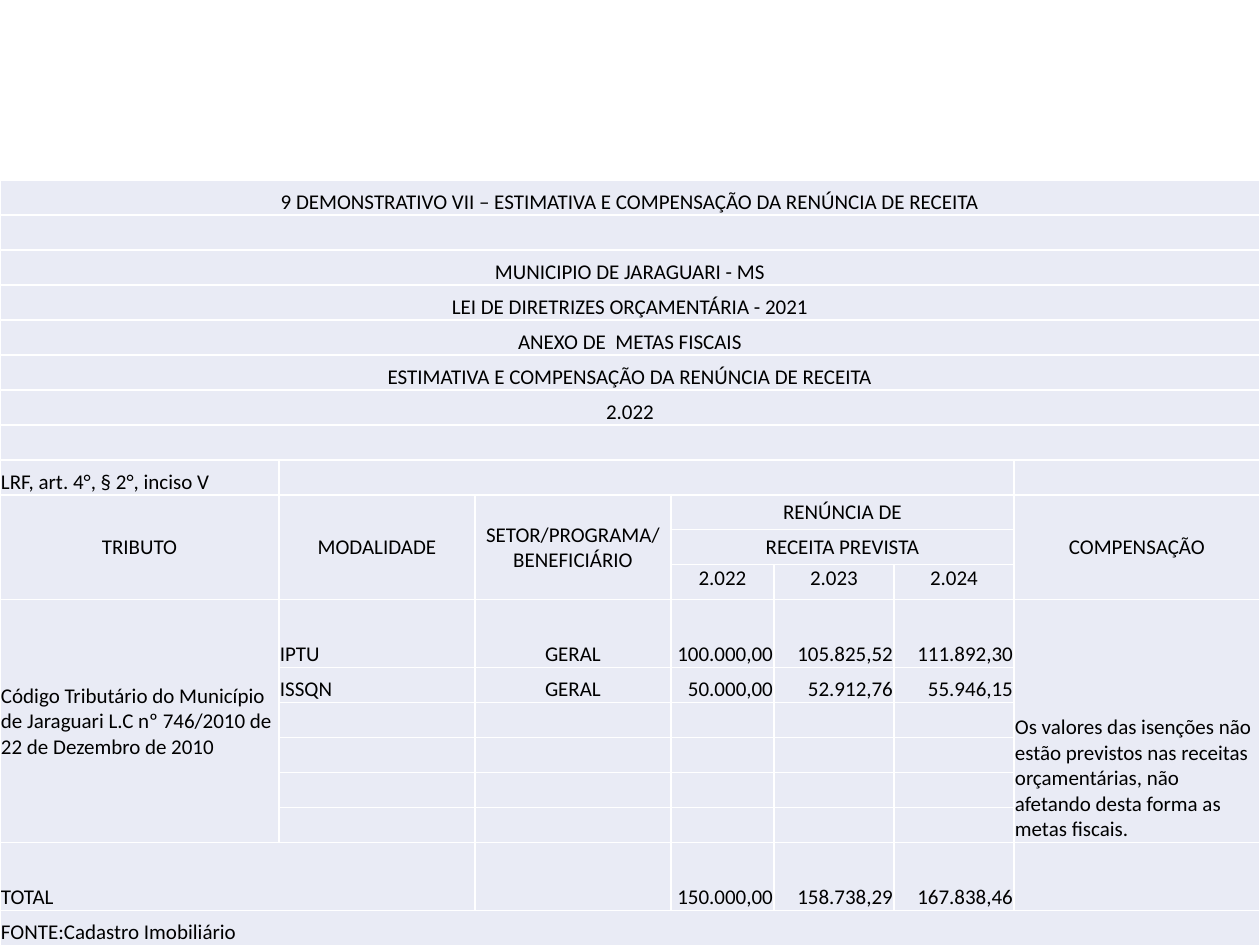
import pptx
import pptx.util
import pptx.dml.color
import pptx.enum.text
import pptx.oxml.ns
from lxml import etree

PX = 914400 // 126
COLORS = {"cell": "E9EBF5", "border": "FFFFFF", "text": "000000"}
FONT, SIZE = "Calibri", 12
ALIGN = {
    "l": pptx.enum.text.PP_ALIGN.LEFT,
    "c": pptx.enum.text.PP_ALIGN.CENTER,
    "r": pptx.enum.text.PP_ALIGN.RIGHT,
}
ANCHOR = {
    "t": pptx.enum.text.MSO_ANCHOR.TOP,
    "m": pptx.enum.text.MSO_ANCHOR.MIDDLE,
    "b": pptx.enum.text.MSO_ANCHOR.BOTTOM,
}

# Content
TITLES = [
    "9 DEMONSTRATIVO VII – ESTIMATIVA E COMPENSAÇÃO DA RENÚNCIA DE RECEITA",
    "",
    "MUNICIPIO DE JARAGUARI - MS",
    "LEI DE DIRETRIZES ORÇAMENTÁRIA - 2021",
    "ANEXO DE  METAS FISCAIS",
    "ESTIMATIVA E COMPENSAÇÃO DA RENÚNCIA DE RECEITA",
    "2.022",
    "",
]
HEADERS = {0: "TRIBUTO", 1: "MODALIDADE", 2: "SETOR/PROGRAMA/BENEFICIÁRIO", 6: "COMPENSAÇÃO"}
REVENUE_HEADERS = ["RENÚNCIA DE", "RECEITA PREVISTA"]
YEARS = ["2.022", "2.023", "2.024"]
TAXES = [
    ("IPTU", "GERAL", "100.000,00", "105.825,52", "111.892,30"),
    ("ISSQN", "GERAL", "50.000,00", "52.912,76", "55.946,15"),
]
TOTALS = ["150.000,00", "158.738,29", "167.838,46"]
LAW = "Código Tributário do Município de Jaraguari L.C nº 746/2010 de 22 de Dezembro de 2010"
COMPENSATION = ("Os valores das isenções não estão previstos nas receitas orçamentárias, "
                "não afetando desta forma as metas fiscais.")

# Rows of each part of the table
REFERENCE = len(TITLES)
HEADER = REFERENCE + 1
YEAR = HEADER + len(REVENUE_HEADERS)
BODY, BODY_ROWS = YEAR + 1, 6
TOTAL = BODY + BODY_ROWS
SOURCE = TOTAL + 1
COL_WIDTHS = [279, 196, 196, 103, 120, 120, 246]
ROW_HEIGHTS = [68 if i in (BODY, TOTAL) else 35 for i in range(SOURCE + 1)]
TOP, LAST = 180, len(COL_WIDTHS) - 1


def rgb(name):
    return pptx.dml.color.RGBColor.from_string(COLORS[name])


def style_cell(cell):
    cell.margin_left = cell.margin_right = cell.margin_top = PX
    cell.margin_bottom = 0
    cell.fill.solid()
    cell.fill.fore_color.rgb = rgb("cell")
    tag = pptx.oxml.ns.qn
    tcPr = cell._tc.get_or_add_tcPr()
    for i, side in enumerate(("a:lnL", "a:lnR", "a:lnT", "a:lnB")):
        ln = etree.Element(tag(side), w="12700")
        fill = etree.SubElement(ln, tag("a:solidFill"))
        etree.SubElement(fill, tag("a:srgbClr"), val=COLORS["border"])
        tcPr.insert(i, ln)
    # Keeps empty cells from growing past their row height
    p = cell.text_frame.paragraphs[0]
    etree.SubElement(p._p, tag("a:endParaRPr"), sz=str(SIZE * 100))


def put(table, row, col, text, align="l", anchor="b", rows=1, cols=1):
    cell = table.cell(row, col)
    if rows > 1 or cols > 1:
        cell.merge(table.cell(row + rows - 1, col + cols - 1))
    cell.vertical_anchor = ANCHOR[anchor]
    if not text:
        return
    p = cell.text_frame.paragraphs[0]
    p.text = text
    p.alignment = ALIGN[align]
    for r in p.runs:
        r.font.name = FONT
        r.font.size = pptx.util.Pt(SIZE)
        r.font.color.rgb = rgb("text")


prs = pptx.Presentation()
prs.slide_width, prs.slide_height = 1260 * PX, 945 * PX
s = prs.slides.add_slide(prs.slide_layouts[6])

# Table grid
table = s.shapes.add_table(
    len(ROW_HEIGHTS), len(COL_WIDTHS), 0, TOP * PX,
    sum(COL_WIDTHS) * PX, sum(ROW_HEIGHTS) * PX).table
table.first_row = table.horz_banding = False
for column, width in zip(table.columns, COL_WIDTHS):
    column.width = width * PX
for row, height in zip(table.rows, ROW_HEIGHTS):
    row.height = height * PX
for cell in table.iter_cells():
    style_cell(cell)

# Titles and legal reference
for i, title in enumerate(TITLES):
    put(table, i, 0, title, "c", cols=LAST + 1)
put(table, REFERENCE, 0, "LRF, art. 4°, § 2°, inciso V")
put(table, REFERENCE, 1, "", cols=5)

# Column headers
for col, text in HEADERS.items():
    put(table, HEADER, col, text, "c", "m", rows=3)
for i, text in enumerate(REVENUE_HEADERS):
    put(table, HEADER + i, 3, text, "c", "m", cols=3)
for i, year in enumerate(YEARS):
    put(table, YEAR, 3 + i, year, "c", "t")

# Taxes and totals
put(table, BODY, 0, LAW, anchor="m", rows=BODY_ROWS)
put(table, BODY, LAST, COMPENSATION, rows=BODY_ROWS)
for i, tax in enumerate(TAXES):
    for col, (text, align) in enumerate(zip(tax, "lcrrr"), 1):
        put(table, BODY + i, col, text, align)
put(table, TOTAL, 0, "TOTAL", cols=2)
for i, total in enumerate(TOTALS):
    put(table, TOTAL, 3 + i, total, "r")
put(table, SOURCE, 0, "FONTE:Cadastro Imobiliário", cols=LAST + 1)

prs.save("out.pptx")
